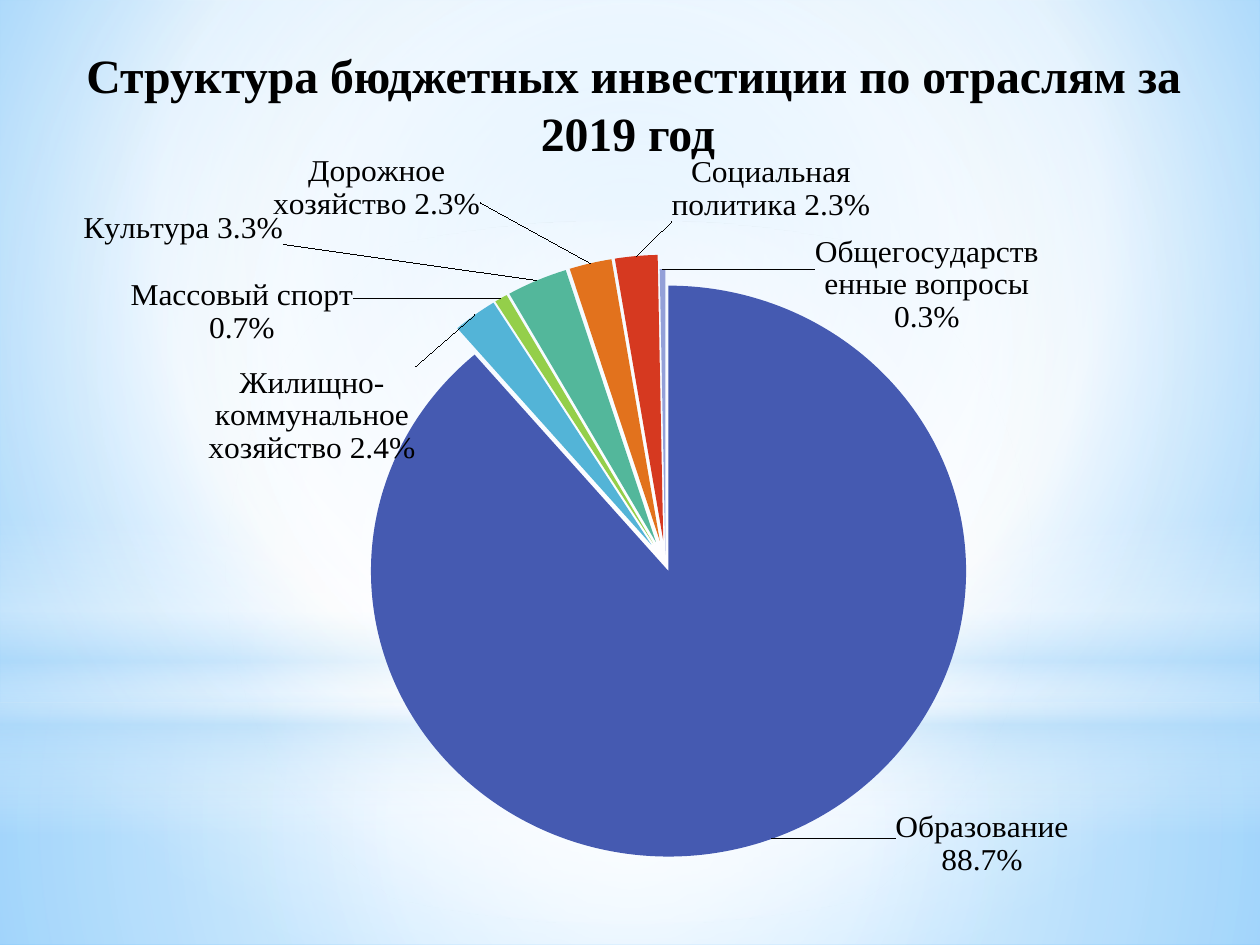
import copy
import math
from dataclasses import dataclass

from lxml import etree
from pptx import Presentation
from pptx.chart.data import CategoryChartData
from pptx.dml.color import RGBColor
from pptx.enum.chart import XL_CHART_TYPE, XL_LABEL_POSITION
from pptx.enum.shapes import MSO_SHAPE
from pptx.enum.text import MSO_ANCHOR, PP_ALIGN
from pptx.oxml import parse_xml
from pptx.oxml.ns import nsdecls, qn
from pptx.util import Emu, Pt

PIE = XL_CHART_TYPE.PIE
OUTSIDE_END = XL_LABEL_POSITION.OUTSIDE_END
RECTANGLE = MSO_SHAPE.RECTANGLE
OVAL = MSO_SHAPE.OVAL
MIDDLE = MSO_ANCHOR.MIDDLE
CENTER = PP_ALIGN.CENTER

PX = 914400 / 126
FONT = "Times New Roman"
BLACK = RGBColor(0x00, 0x00, 0x00)
INDIGO = RGBColor(0x45, 0x5A, 0xB1)
SKY = RGBColor(0x53, 0xB4, 0xD7)
LIME = RGBColor(0x94, 0xCF, 0x4A)
TEAL = RGBColor(0x53, 0xB7, 0x9B)
ORANGE = RGBColor(0xE2, 0x72, 0x1D)
RED = RGBColor(0xD6, 0x39, 0x20)
LAVENDER = RGBColor(0x93, 0xA0, 0xD8)
WHITE = RGBColor(0xFF, 0xFF, 0xFF)
PALE_BLUE = RGBColor(0xB4, 0xDC, 0xFA)
LIGHT_SKY = RGBColor(0x9E, 0xD5, 0xFF)
DEEP_SKY = RGBColor(0x5B, 0xB9, 0xFF)

CENTRED = '<a:path path="circle"><a:fillToRect l="50000" t="50000" r="50000" b="50000"/></a:path>'
OFF_CENTRE = '<a:path path="circle"><a:fillToRect l="20000" t="10000" r="20000" b="60000"/></a:path>'
DOWNWARD = '<a:lin ang="5400000" scaled="0"/>'


@dataclass(frozen=True)
class Box:
    left: int
    top: int
    width: int
    height: int

    def emu(self) -> list[Emu]:
        return [Emu(round(side * PX)) for side in (self.left, self.top, self.width, self.height)]


@dataclass(frozen=True)
class Stop:
    percent: int
    color: RGBColor
    opacity: int = 100


@dataclass(frozen=True)
class Glow:
    preset: MSO_SHAPE
    box: Box
    direction: str
    stops: tuple[Stop, ...]


@dataclass(frozen=True)
class Slice:
    name: str
    share: float
    color: RGBColor
    explosion: int
    label_x: int  # where the label corner nearest to the pie goes
    label_y: int


CHART = Box(15, 155, 1181, 756)
PLOT = Box(359, 263, 613, 635)
BASE_EXPLOSION = 3
PIE_X = PLOT.left + PLOT.width / 2
PIE_Y = PLOT.top + PLOT.height / 2
PIE_RADIUS = PLOT.width / 2 / (1 + BASE_EXPLOSION / 100)

GLOWS = (
    Glow(RECTANGLE, Box(0, 703, 1260, 242), CENTRED,
         (Stop(0, WHITE, 91), Stop(37, WHITE, 76), Stop(100, PALE_BLUE, 79))),
    Glow(RECTANGLE, Box(0, 0, 1260, 703), CENTRED,
         (Stop(0, WHITE, 89), Stop(48, WHITE, 62), Stop(100, PALE_BLUE, 79))),
    Glow(RECTANGLE, Box(0, 519, 1260, 315), DOWNWARD,
         (Stop(0, WHITE, 0), Stop(29, WHITE, 30), Stop(45, PALE_BLUE, 40),
          Stop(55, WHITE, 26), Stop(65, PALE_BLUE, 60), Stop(100, WHITE, 0))),
    Glow(OVAL, Box(0, 221, 1260, 703), CENTRED,
         (Stop(0, WHITE), Stop(56, WHITE, 0))),
)

SLICES = (
    Slice("Образование", 0.887, INDIGO, BASE_EXPLOSION, 893, 832),
    Slice("Жилищно-коммунальное хозяйство", 0.024, SKY, 8, 420, 484),
    Slice("Массовый спорт", 0.007, LIME, 8, 357, 359),
    Slice("Культура", 0.033, TEAL, 8, 286, 255),
    Slice("Дорожное хозяйство", 0.023, ORANGE, 8, 482, 212),
    Slice("Социальная политика", 0.023, RED, 8, 871, 232),
    Slice("Общегосударственные вопросы", 0.003, LAVENDER, BASE_EXPLOSION, 927, 349),
)


def gradient(stops: tuple[Stop, ...], direction: str) -> etree._Element:
    stop_xml = "".join(
        f'<a:gs pos="{stop.percent * 1000}"><a:srgbClr val="{stop.color}">'
        f'<a:alpha val="{stop.opacity * 1000}"/></a:srgbClr></a:gs>'
        for stop in stops
    )
    return parse_xml(f'<a:gradFill {nsdecls("a")} rotWithShape="1">'
                     f"<a:gsLst>{stop_xml}</a:gsLst>{direction}</a:gradFill>")


def paint_background(slide) -> None:
    background = parse_xml(f'<p:bg {nsdecls("p", "a")}><p:bgPr><a:effectLst/></p:bgPr></p:bg>')
    stops = (Stop(0, LIGHT_SKY), Stop(60, WHITE), Stop(100, DEEP_SKY))
    background[0].insert(0, gradient(stops, OFF_CENTRE))
    slide.element.cSld.insert(0, background)


def add_glow(slide, glow: Glow) -> None:
    shape = slide.shapes.add_shape(glow.preset, *glow.box.emu())
    shape.shadow.inherit = False
    shape.line.fill.background()
    geometry = shape.element.spPr.find(qn("a:prstGeom"))
    geometry.addnext(gradient(glow.stops, glow.direction))


def add_title(slide, text: str) -> None:
    text_frame = slide.shapes.add_textbox(*Box(15, 26, 1226, 155).emu()).text_frame
    text_frame.word_wrap = True
    text_frame.vertical_anchor = MIDDLE
    text_frame.text = text
    paragraph = text_frame.paragraphs[0]
    paragraph.alignment = CENTER
    font = paragraph.runs[0].font
    font.name, font.size, font.bold = FONT, Pt(27.3), True
    font.color.rgb = BLACK


def manual_layout(x: float, y: float, mode: str = "") -> etree._Element:
    return parse_xml(f'<c:layout {nsdecls("c")}><c:manualLayout>{mode}'
                     f'<c:x val="{x:.4f}"/><c:y val="{y:.4f}"/></c:manualLayout></c:layout>')


def place_plot(plot_area) -> None:
    layout = manual_layout((PLOT.left - CHART.left) / CHART.width,
                           (PLOT.top - CHART.top) / CHART.height,
                           '<c:layoutTarget val="inner"/><c:xMode val="edge"/><c:yMode val="edge"/>')
    for tag, part in (("w", PLOT.width / CHART.width), ("h", PLOT.height / CHART.height)):
        etree.SubElement(layout[0], qn(f"c:{tag}")).set("val", f"{part:.4f}")
    for existing in plot_area.findall(qn("c:layout")):
        plot_area.remove(existing)
    plot_area.insert(0, layout)


def label_layout(piece: Slice, middle: float) -> etree._Element:
    """Offset of a label from its default spot at the rim of the slice."""
    angle = 2 * math.pi * middle
    reach = PIE_RADIUS * (1 + piece.explosion / 100)
    rim_x = PIE_X + reach * math.sin(angle)
    rim_y = PIE_Y - reach * math.cos(angle)
    return manual_layout((piece.label_x - rim_x) / CHART.width,
                         (piece.label_y - rim_y) / CHART.height)


def add_labels(series) -> None:
    labels = series.data_labels
    labels.number_format, labels.number_format_is_linked = "0.0%", False
    labels.show_value = labels.show_category_name = True
    labels.position = OUTSIDE_END
    labels.font.name, labels.font.size = FONT, Pt(18)
    labels.font.color.rgb = BLACK
    element = labels._element
    shared = [element.find(qn(f"c:{tag}")) for tag in ("numFmt", "txPr")]
    start = 0.0
    for index, piece in enumerate(SLICES):
        label = parse_xml(
            f'<c:dLbl {nsdecls("c")}><c:idx val="{index}"/><c:dLblPos val="outEnd"/>'
            '<c:showLegendKey val="0"/><c:showVal val="1"/><c:showCatName val="1"/>'
            '<c:showSerName val="0"/><c:showPercent val="0"/><c:showBubbleSize val="0"/>'
            "<c:separator> </c:separator></c:dLbl>")
        label[1:1] = [label_layout(piece, start + piece.share / 2), *map(copy.deepcopy, shared)]
        element.insert(index, label)
        start += piece.share
    for leader in element.findall(qn("c:showLeaderLines")):
        element.remove(leader)
    etree.SubElement(element, qn("c:separator")).text = " "
    etree.SubElement(element, qn("c:showLeaderLines")).set("val", "1")


def explosion(percent: int) -> etree._Element:
    return parse_xml(f'<c:explosion {nsdecls("c")} val="{percent}"/>')


def add_pie(slide) -> None:
    data = CategoryChartData(number_format="0.0%")
    data.categories = [piece.name for piece in SLICES]
    data.add_series("Series 1", [piece.share for piece in SLICES])
    chart = slide.shapes.add_chart(PIE, *CHART.emu(), data).chart
    chart.has_legend = chart.has_title = False
    chart.font.name, chart.font.size = FONT, Pt(18)
    chart.font.color.rgb = BLACK
    plot = chart.plots[0]
    plot.vary_by_categories = True
    series = plot.series[0]
    for index, piece in enumerate(SLICES):
        point_format = series.points[index].format
        point_format.fill.solid()
        point_format.fill.fore_color.rgb = piece.color
        point_format.line.fill.background()
    # Pull the slices apart
    points = series._element.findall(qn("c:dPt"))
    points[0].addprevious(explosion(BASE_EXPLOSION))
    for point, piece in zip(points, SLICES):
        point.find(qn("c:spPr")).addprevious(explosion(piece.explosion))
    add_labels(series)
    place_plot(series._element.getparent().getparent())


def main() -> None:
    presentation = Presentation()
    presentation.slide_width, presentation.slide_height = Box(0, 0, 1260, 945).emu()[2:]
    slide = presentation.slides.add_slide(presentation.slide_layouts[6])
    paint_background(slide)
    for glow in GLOWS:
        add_glow(slide, glow)
    add_title(slide, " Структура бюджетных инвестиции по отраслям за 2019 год")
    add_pie(slide)
    presentation.save("out.pptx")


if __name__ == "__main__":
    main()
